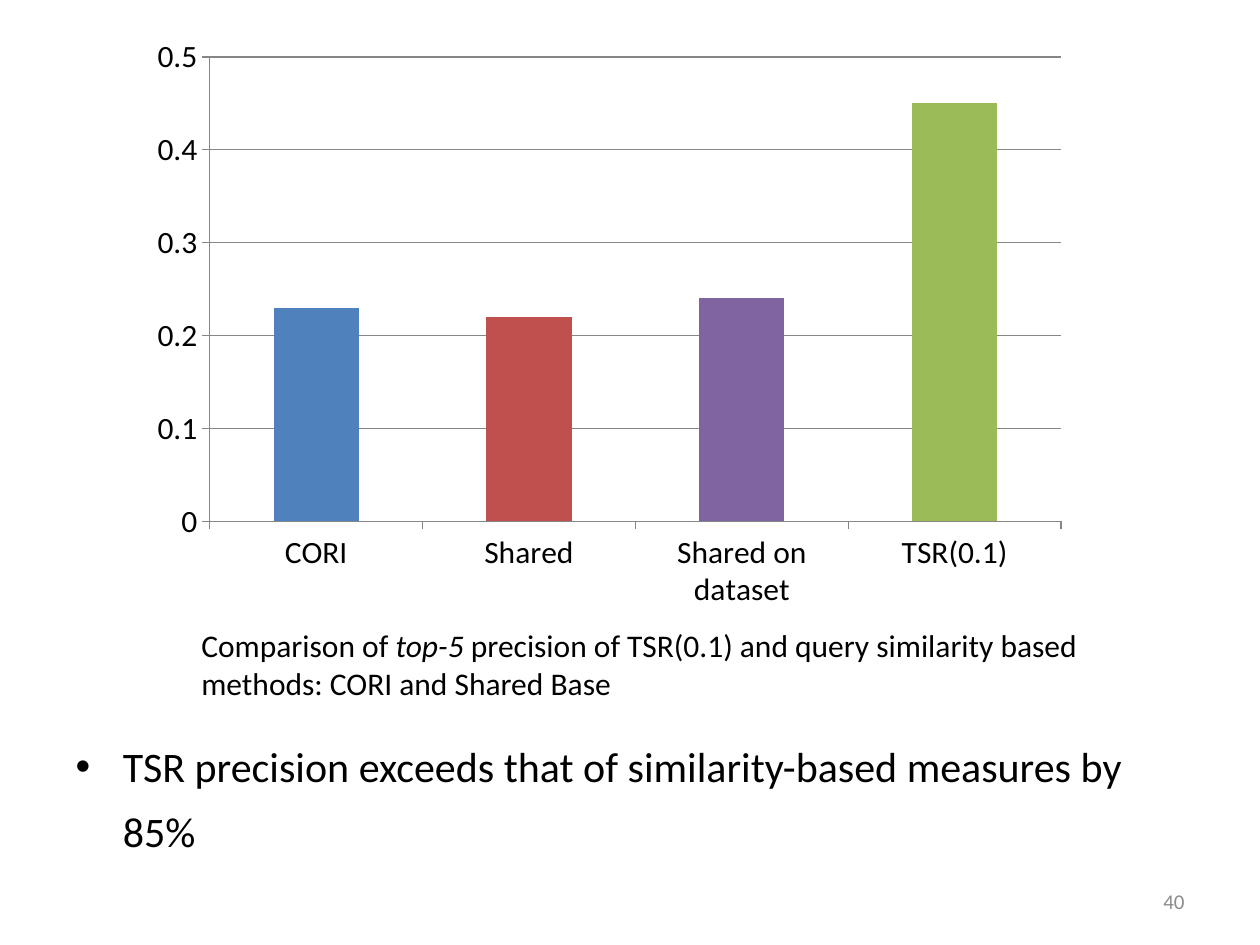
from lxml.etree import SubElement
from pptx import Presentation
from pptx.chart.data import CategoryChartData
from pptx.dml.color import RGBColor
from pptx.enum.chart import XL_CHART_TYPE, XL_TICK_MARK
from pptx.enum.text import MSO_ANCHOR, MSO_AUTO_SIZE, PP_ALIGN
from pptx.oxml.ns import qn
from pptx.util import Inches, Pt

FONT = "Calibri"
BLACK = "000000"
AXIS_GRAY = "868686"
PRECISION = {
    "CORI": (0.23, "4F81BD"),
    "Shared": (0.22, "C0504D"),
    "Shared on dataset": (0.24, "8064A2"),
    "TSR(0.1)": (0.45, "9BBB59"),
}


def color(value):
    """Turn a hex string into a colour."""
    return RGBColor.from_string(value)


def add_span(para, text, size, fill=BLACK, italic=False):
    """Append one formatted run to a paragraph."""
    span = para.add_run()
    span.text = text
    span.font.name = FONT
    span.font.size = Pt(size)
    span.font.italic = italic
    span.font.color.rgb = color(fill)


def add_box(page, left, top, width, height):
    """Add a wrapping text box and return its text frame."""
    box = page.shapes.add_textbox(Inches(left), Inches(top), Inches(width), Inches(height))
    box.text_frame.word_wrap = True
    return box.text_frame


def add_page_number(page, number):
    """Add the page number in the lower right corner."""
    frame = add_box(page, 7.17, 6.95, 2.33, 0.4)
    frame.vertical_anchor = MSO_ANCHOR.MIDDLE
    para = frame.paragraphs[0]
    para.alignment = PP_ALIGN.RIGHT
    add_span(para, number, 12, "8C8C8C")


def add_caption(page):
    """Add the caption under the chart."""
    para = add_box(page, 1.5, 4.92, 7.33, 0.71).paragraphs[0]
    add_span(para, "Comparison of ", 18)
    add_span(para, "top-5 ", 18, italic=True)
    add_span(
        para,
        "precision of TSR(0.1) and query similarity based methods: CORI and Shared Base",
        18,
    )


def fill_body(page):
    """Place the conclusion in the body placeholder."""
    body = page.placeholders[1]
    body.left, body.top = Inches(0.5), Inches(5.83)
    body.width, body.height = Inches(9), Inches(1.33)
    body.text_frame.auto_size = MSO_AUTO_SIZE.NONE
    para = body.text_frame.paragraphs[0]
    add_span(para, "TSR precision exceeds that of similarity-based measures by 85%", 24)
    add_span(para, " ", 32)


def set_plot_area(chart, x, y, w, h):
    """Fix the inner plot area as fractions of the chart."""
    plot_area = chart.plots[0]._element.getparent()
    layout = plot_area.find(qn("c:layout"))
    if layout is None:
        layout = SubElement(plot_area, qn("c:layout"))
        plot_area.insert(0, layout)
    manual = SubElement(layout, qn("c:manualLayout"))
    settings = {"layoutTarget": "inner", "xMode": "edge", "yMode": "edge",
                "x": x, "y": y, "w": w, "h": h}
    for name, value in settings.items():
        SubElement(manual, qn(f"c:{name}")).set("val", str(value))


def style_line(line):
    """Give an axis or grid line its gray stroke."""
    line.color.rgb = color(AXIS_GRAY)
    line.width = Pt(0.75)


def add_precision_chart(page):
    """Add the column chart of precision by method."""
    data = CategoryChartData()
    data.categories = list(PRECISION)
    data.add_series("Series 1", [value for value, _ in PRECISION.values()])
    chart = page.shapes.add_chart(
        XL_CHART_TYPE.COLUMN_CLUSTERED,
        Inches(1), Inches(0.25), Inches(7.83), Inches(4.58), data,
    ).chart
    chart.has_legend = False
    chart.has_title = False
    chart.font.name = FONT
    chart.font.size = Pt(18)
    chart.font.color.rgb = color(BLACK)

    plot = chart.plots[0]
    plot.gap_width = 150
    plot.vary_by_categories = False
    series = plot.series[0]
    series.invert_if_negative = False
    for index, (_, fill) in enumerate(PRECISION.values()):
        target = series.points[index] if index else series
        target.format.fill.solid()
        target.format.fill.fore_color.rgb = color(fill)

    for axis in (chart.category_axis, chart.value_axis):
        axis.major_tick_mark = XL_TICK_MARK.OUTSIDE
        style_line(axis.format.line)
    scale = chart.value_axis
    scale.minimum_scale, scale.maximum_scale, scale.major_unit = 0, 0.5, 0.1
    scale.has_major_gridlines = True
    style_line(scale.major_gridlines.format.line)
    set_plot_area(chart, 0.085, 0.045, 0.863, 0.819)


def main():
    """Build and save the deck."""
    deck = Presentation()
    deck.slide_width, deck.slide_height = Inches(10), Inches(7.5)
    page = deck.slides.add_slide(deck.slide_layouts[1])
    title = page.shapes.title._element
    title.getparent().remove(title)
    add_page_number(page, "40")
    add_caption(page)
    fill_body(page)
    add_precision_chart(page)
    deck.save("out.pptx")


if __name__ == "__main__":
    main()
